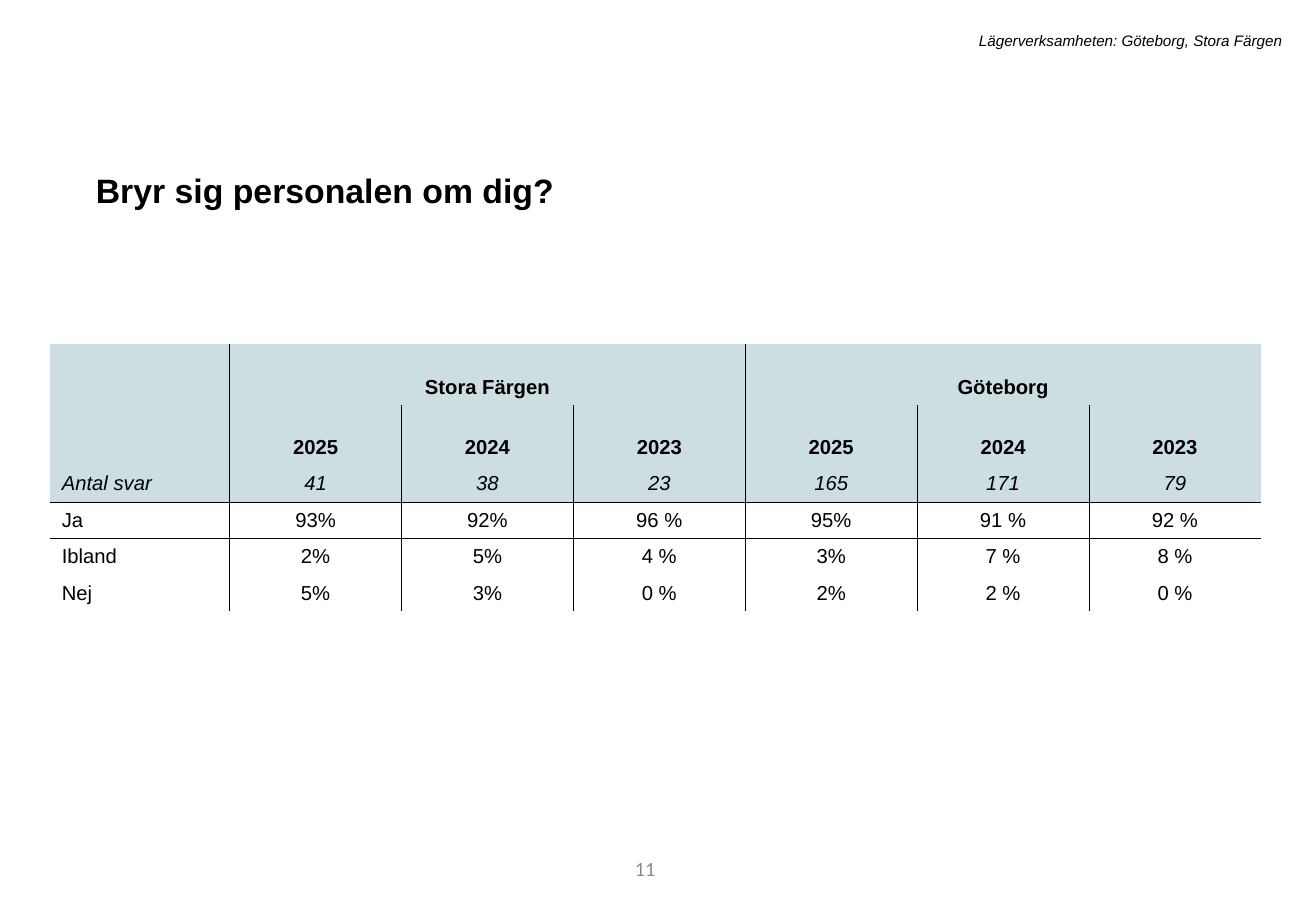
from lxml.etree import SubElement
from pptx import Presentation
from pptx.dml.color import RGBColor
from pptx.enum.text import MSO_ANCHOR, MSO_AUTO_SIZE, PP_ALIGN
from pptx.oxml.ns import qn
from pptx.util import Cm, Pt

COLORS = {"text": "000000", "header": "CCDEE1", "line": "000000", "muted": "8C8C8C"}
NO_STYLE = "{2D5ABB26-0587-4C30-8999-92F81FD0307C}"
GROUPS = ["Stora Färgen", "Göteborg"]
YEARS = ["2025", "2024", "2023"]
ROWS = [
    ["", *YEARS, *YEARS],
    ["Antal svar", "41", "38", "23", "165", "171", "79"],
    ["Ja", "93%", "92%", "96 %", "95%", "91 %", "92 %"],
    ["Ibland", "2%", "5%", "4 %", "3%", "7 %", "8 %"],
    ["Nej", "5%", "3%", "0 %", "2%", "2 %", "0 %"],
]
HEADER_ROWS = 3


def write(tf, text, size=12, font="Arial", color="text", bold=False, italic=False,
          align=PP_ALIGN.LEFT):
    """Write one formatted paragraph and return it."""
    p = tf.paragraphs[0]
    p.alignment = align
    r = p.add_run()
    r.text = text
    r.font.name = font
    r.font.size = Pt(size)
    r.font.bold = bold
    r.font.italic = italic
    r.font.color.rgb = RGBColor.from_string(COLORS[color])
    return p


def add_text(s, box, text, anchor=MSO_ANCHOR.TOP, **fmt):
    """Add a wrapping text box."""
    tf = s.shapes.add_textbox(*(Cm(v) for v in box)).text_frame
    tf.word_wrap = True
    tf.vertical_anchor = anchor
    write(tf, text, **fmt)


def add_title(s, box, text):
    """Place and format the title placeholder."""
    sp = s.shapes.title
    sp.left, sp.top, sp.width, sp.height = (Cm(v) for v in box)
    tf = sp.text_frame
    tf.auto_size = MSO_AUTO_SIZE.SHAPE_TO_FIT_TEXT
    tf.vertical_anchor = MSO_ANCHOR.TOP
    p = write(tf, text, size=20, bold=True)
    p.line_spacing = 1.2
    p.space_before = Pt(10)


def set_borders(cell, sides):
    """Draw thin lines on the given sides of a cell."""
    tc_pr = cell._tc.get_or_add_tcPr()
    for side in sides:
        ln = SubElement(tc_pr, qn(f"a:ln{side}"), w=str(Pt(0.25)))
        fill = SubElement(ln, qn("a:solidFill"))
        SubElement(fill, qn("a:srgbClr"), val=COLORS["line"])


def cell_sides(row, col, cols):
    """Return the sides of a cell that carry a line."""
    span = len(YEARS) if row == 0 else 1
    sides = "L" if col > 0 and (col - 1) % span == 0 else ""
    if col < cols - 1 and col % span == 0:
        sides += "R"
    if row == HEADER_ROWS:
        sides += "T"
    if row == HEADER_ROWS - 1:
        sides += "B"
    return sides


def add_results(s, box):
    """Add the table of answers by place and year."""
    left, top, width, height = box
    group_row = [""]
    for group in GROUPS:
        group_row += [group] + [""] * (len(YEARS) - 1)
    data = [group_row, *ROWS]
    cols = len(group_row)
    table = s.shapes.add_table(len(data), cols, Cm(left), Cm(top), Cm(width), Cm(height)).table
    table.first_row = table.horz_banding = False
    table._tbl.tblPr.find(qn("a:tableStyleId")).text = NO_STYLE

    label_width = 3.76
    for i, column in enumerate(table.columns):
        column.width = Cm((width - label_width) / (cols - 1) if i else label_width)
    for i, row in enumerate(table.rows):
        row.height = Cm(1.27 if i < 2 else (height - 2 * 1.27) / (len(data) - 2))

    for i, values in enumerate(data):
        for j, value in enumerate(values):
            cell = table.cell(i, j)
            set_borders(cell, cell_sides(i, j, cols))
            if i < HEADER_ROWS:
                cell.fill.solid()
                cell.fill.fore_color.rgb = RGBColor.from_string(COLORS["header"])
            else:
                cell.fill.background()
            cell.vertical_anchor = MSO_ANCHOR.BOTTOM if i < 2 else MSO_ANCHOR.MIDDLE
            if value:
                write(cell.text_frame, value, bold=i < 2, italic=i == 2,
                      align=PP_ALIGN.CENTER if j else PP_ALIGN.LEFT)
    for j in range(1, cols, len(YEARS)):
        table.cell(0, j).merge(table.cell(0, j + len(YEARS) - 1))


def main():
    """Build and save the slide."""
    prs = Presentation()
    prs.slide_width, prs.slide_height = Cm(27.51), Cm(19.05)
    s = prs.slides.add_slide(prs.slide_layouts[5])
    add_text(s, (4.55, 0.53, 22.5, 0.64), "Lägerverksamheten: Göteborg, Stora Färgen",
             size=9, italic=True, align=PP_ALIGN.RIGHT)
    add_title(s, (1.75, 3.25, 23.88, 1.19), "Bryr sig personalen om dig?")
    add_results(s, (1.04, 7.19, 25.32, 5.58))
    add_text(s, (7.75, 17.65, 6.2, 1.02), "11", anchor=MSO_ANCHOR.MIDDLE,
             font="Calibri", color="muted", align=PP_ALIGN.RIGHT)
    prs.save("out.pptx")


if __name__ == "__main__":
    main()
